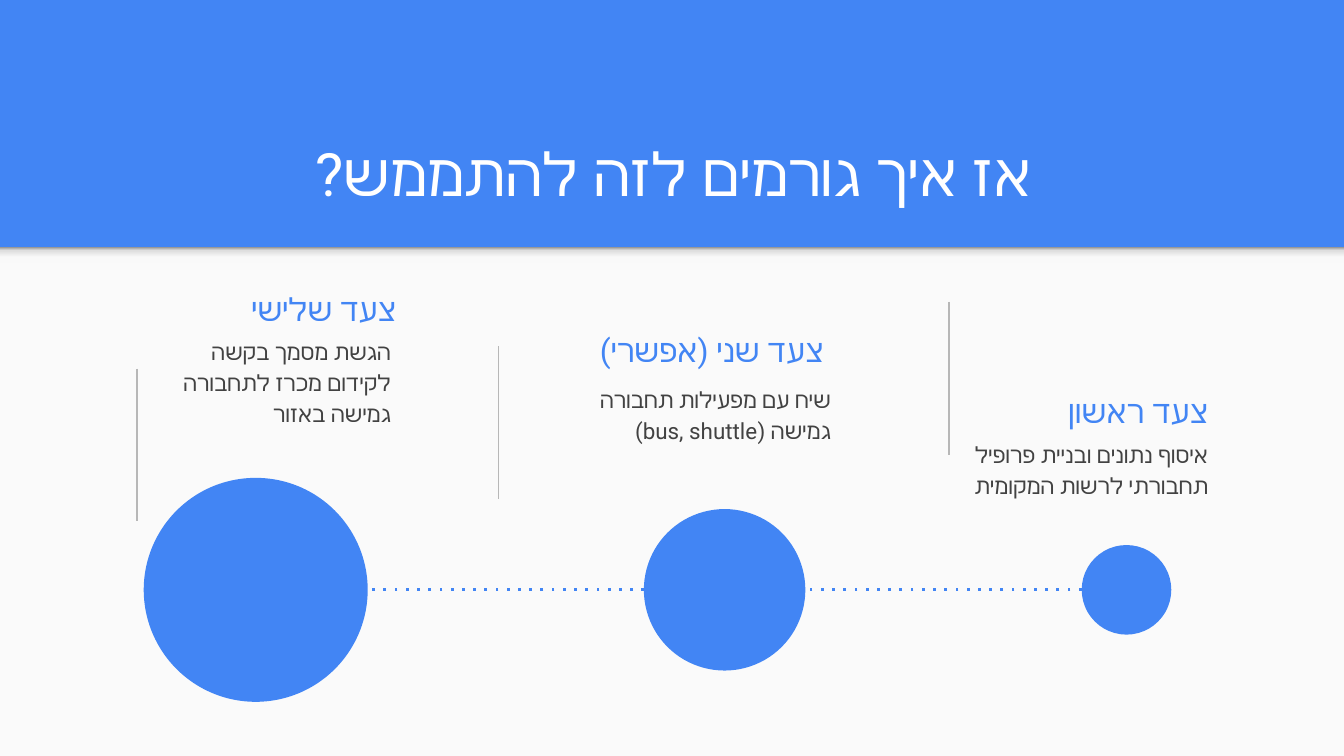
from dataclasses import dataclass

from lxml import etree
from pptx import Presentation
from pptx import util as u
from pptx.dml.color import RGBColor
from pptx.enum import shapes, text
from pptx.oxml import ns


@dataclass(frozen=True)
class Theme:
    font: str = "Roboto"
    blue: str = "4285F4"
    white: str = "FFFFFF"
    panel: str = "FAFAFA"
    body: str = "424242"
    divider: str = "B7B7B7"
    shadow: tuple = ((0, "F9F9F9"), (36, "F9F9F9"), (80, "DEDEDE"), (100, "999999"))
    title_size: float = 32
    heading_size: float = 17
    body_size: float = 12


@dataclass(frozen=True)
class Box:
    left: float
    top: float
    width: float
    height: float


@dataclass(frozen=True)
class Step:
    heading: str
    detail: str
    heading_at: tuple[float, float]
    detail_at: tuple[float, float]
    divider_at: tuple[float, float]
    centre: float
    diameter: float


THEME = Theme()
WIDTH, HEIGHT = 720, 405
PANEL_TOP = 132.5
TIMELINE_Y = 316
DIVIDER_LENGTH = 81.7
TEXT_WIDTH, HEADING_HEIGHT, DETAIL_HEIGHT = 142.5, 31, 45.5

STEPS = [
    Step("צעד שלישי", "הגשת מסמך בקשה לקידום מכרז לתחבורה גמישה באזור",
         (77, 149.8), (74.2, 172), (73.4, 197.5), 137, 120),
    Step("צעד שני (אפשרי)", "שיח עם מפעילות תחבורה גמישה (bus, shuttle)",
         (306, 172), (309.8, 197.3), (267.2, 185.5), 388.2, 86.5),
    Step("צעד ראשון", "איסוף נתונים ובניית פרופיל תחבורתי לרשות המקומית",
         (512, 204.5), (512, 226.8), (508.4, 161.8), 603.5, 48),
]


def apply(target, values: dict) -> None:
    for name, value in values.items():
        setattr(target, name, value)


def place(shape, box: Box) -> None:
    apply(shape, {side: u.Pt(getattr(box, side))
                  for side in ("left", "top", "width", "height")})


def write(shape, words: str, size: float, colour: str, align, anchor,
          spacing: float = 1.0) -> None:
    """Fill a text shape with one right-to-left paragraph."""
    frame = shape.text_frame
    inset = u.Pt(7.2)
    apply(frame, {"word_wrap": True, "auto_size": text.MSO_AUTO_SIZE.NONE,
                  "vertical_anchor": anchor, "margin_left": inset,
                  "margin_right": inset, "margin_top": inset, "margin_bottom": inset})
    paragraph = frame.paragraphs[0]
    apply(paragraph, {"alignment": align, "line_spacing": spacing,
                      "space_before": u.Pt(0)})
    paragraph._p.get_or_add_pPr().set("rtl", "1")
    run = paragraph.add_run()
    run.text = words
    apply(run.font, {"name": THEME.font, "size": u.Pt(size)})
    run.font.color.rgb = RGBColor.from_string(colour)
    script_font = etree.SubElement(run.font._element, ns.qn("a:cs"))
    script_font.set("typeface", THEME.font)


def add_label(slide, words: str, box: Box, *style) -> None:
    label = slide.shapes.add_textbox(0, 0, 0, 0)
    place(label, box)
    write(label, words, *style)


def add_solid(slide, kind, box: Box, colour: str):
    solid = slide.shapes.add_shape(kind, 0, 0, 0, 0)
    place(solid, box)
    solid.shadow.inherit = False
    solid.fill.solid()
    solid.fill.fore_color.rgb = RGBColor.from_string(colour)
    solid.line.fill.background()
    return solid


def add_line(slide, start: tuple[float, float], end: tuple[float, float],
             colour: str, weight: float, dash: str = "solid") -> None:
    line = slide.shapes.add_connector(
        shapes.MSO_CONNECTOR.STRAIGHT, *(u.Pt(v) for v in start + end))
    line.line.color.rgb = RGBColor.from_string(colour)
    line.line.width = u.Pt(weight)
    properties = line._element.spPr
    etree.SubElement(properties.find(ns.qn("a:ln")), ns.qn("a:prstDash")).set("val", dash)
    etree.SubElement(properties, ns.qn("a:effectLst"))


def add_panel_shadow(slide) -> None:
    """Draw the strip that fades downwards from the panel's top edge."""
    strip = add_solid(slide, shapes.MSO_SHAPE.RECTANGLE,
                      Box(0, PANEL_TOP, WIDTH, 8.6), THEME.panel)
    strip.fill.gradient()
    strip.fill.gradient_angle = 90
    stops = strip._element.spPr.find(".//" + ns.qn("a:gsLst"))
    for stop in list(stops):
        stops.remove(stop)
    for percent, colour in THEME.shadow:
        stop = etree.SubElement(stops, ns.qn("a:gs"), pos=str(percent * 1000))
        etree.SubElement(stop, ns.qn("a:srgbClr"), val=colour)


def add_step_text(slide, step: Step) -> None:
    x, y = step.divider_at
    add_line(slide, (x, y), (x, y + DIVIDER_LENGTH), THEME.divider, 0.75)
    right = text.PP_ALIGN.RIGHT
    add_label(slide, step.heading, Box(*step.heading_at, TEXT_WIDTH, HEADING_HEIGHT),
              THEME.heading_size, THEME.blue, right, text.MSO_ANCHOR.MIDDLE)
    add_label(slide, step.detail, Box(*step.detail_at, TEXT_WIDTH, DETAIL_HEIGHT),
              THEME.body_size, THEME.body, right, text.MSO_ANCHOR.TOP, 1.15)


def add_timeline(slide) -> None:
    last, first = STEPS[0], STEPS[-1]
    add_line(slide, (first.centre - first.diameter / 2, TIMELINE_Y),
             (last.centre + last.diameter / 2, TIMELINE_Y), THEME.blue, 1.5, "dot")
    for step in reversed(STEPS):
        radius = step.diameter / 2
        add_solid(slide, shapes.MSO_SHAPE.OVAL,
                  Box(step.centre - radius, TIMELINE_Y - radius,
                      step.diameter, step.diameter), THEME.blue)


def main() -> None:
    deck = Presentation()
    apply(deck, {"slide_width": u.Pt(WIDTH), "slide_height": u.Pt(HEIGHT)})
    slide = deck.slides.add_slide(deck.slide_layouts[5])
    slide.background.fill.solid()
    slide.background.fill.fore_color.rgb = RGBColor.from_string(THEME.blue)
    add_solid(slide, shapes.MSO_SHAPE.RECTANGLE,
              Box(0, PANEL_TOP, WIDTH, HEIGHT - PANEL_TOP), THEME.panel)
    add_panel_shadow(slide)
    title = slide.shapes.title
    place(title, Box(37.5, 58.3, 647, 60.5))
    write(title, "אז איך גורמים לזה להתממש?", THEME.title_size, THEME.white,
          text.PP_ALIGN.CENTER, text.MSO_ANCHOR.BOTTOM)
    for step in STEPS:
        add_step_text(slide, step)
    add_timeline(slide)
    deck.save("out.pptx")


if __name__ == "__main__":
    main()
